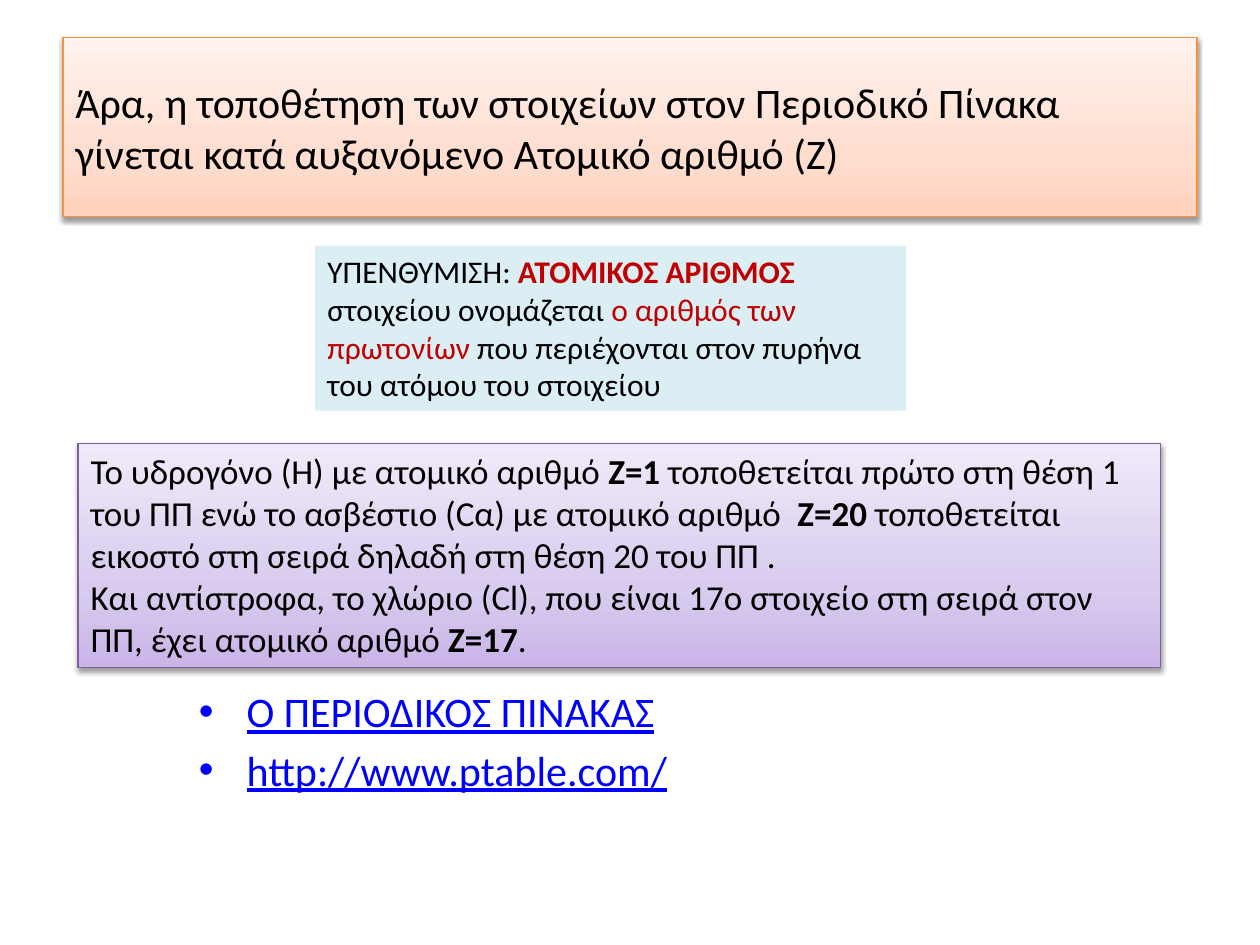
import copy
import pptx
import pptx.dml.color
import pptx.enum.shapes
import pptx.enum.text
import pptx.oxml
import pptx.util

Inches = pptx.util.Inches
Pt = pptx.util.Pt
NS = 'xmlns:a="http://schemas.openxmlformats.org/drawingml/2006/main"'
SHADE = (f'<a:outerShdw {NS} blurRad="39370" dist="20320" dir="5400000" rotWithShape="0">'
         '<a:srgbClr val="000000"><a:alpha val="38000"/></a:srgbClr></a:outerShdw>')
RED = "C00000"


def tint(color):
    return pptx.dml.color.RGBColor.from_string(color)


def write(frame, paras, size=24, color="000000", line=False, bullet=False, gap=0,
          anchor=pptx.enum.text.MSO_ANCHOR.TOP):
    frame.word_wrap = True
    frame.vertical_anchor = anchor
    for i, runs in enumerate(paras):
        para = frame.paragraphs[0] if i == 0 else frame.add_paragraph()
        para.alignment = pptx.enum.text.PP_ALIGN.LEFT
        if i:
            para.space_before = Pt(gap)
        if bullet:
            props = para._p.get_or_add_pPr()
            props.set("marL", str(Inches(0.38)))
            props.set("indent", str(-Inches(0.38)))
            for tag in (f'<a:buFont {NS} typeface="Arial"/>', f'<a:buChar {NS} char="•"/>'):
                props.append(pptx.oxml.parse_xml(tag))
        for text, bold, hue in runs:
            run = para.add_run()
            run.text = text
            font = run.font
            font.name = "Calibri"
            font.size = Pt(size)
            font.bold = bold
            font.underline = line
            font.color.rgb = tint(hue or color)


deck = pptx.Presentation()
deck.slide_width = Inches(10)
deck.slide_height = Inches(7.5)
slide = deck.slides.add_slide(deck.slide_layouts[6])

links = slide.shapes.add_textbox(Inches(1.48), Inches(5.39), Inches(7), Inches(1.21))
write(links.text_frame,
      [[("Ο ΠΕΡΙΟΔΙΚΟΣ ΠΙΝΑΚΑΣ", False, None)], [("http://www.ptable.com/", False, None)]],
      color="0000FF", line=True, bullet=True, gap=4.8)

title = [[("Άρα, η τοποθέτηση των στοιχείων στον Περιοδικό Πίνακα "
           "γίνεται κατά αυξανόμενο Ατομικό αριθμό (Ζ)", False, None)]]
recall = [[
    ("ΥΠΕΝΘΥΜΙΣΗ: ", False, None),
    ("ΑΤΟΜΙΚΟΣ ΑΡΙΘΜΟΣ ", True, RED),
    ("στοιχείου ονομάζεται ", False, None),
    ("ο αριθμός των πρωτονίων", False, RED),
    (" που περιέχονται στον πυρήνα του ατόμου του στοιχείου", False, None),
]]
cases = [[
    ("Το υδρογόνο (Η) με ατομικό αριθμό ", False, None),
    ("Ζ=1", True, None),
    (" τοποθετείται πρώτο στη θέση 1 του ΠΠ ενώ το ασβέστιο (Cα) με ατομικό αριθμό  ", False, None),
    ("Ζ=20", True, None),
    (" τοποθετείται εικοστό στη σειρά δηλαδή στη θέση 20 του ΠΠ .", False, None),
], [
    ("Και αντίστροφα, το χλώριο (Cl), που είναι 17ο στοιχείο στη σειρά στον ΠΠ, "
     "έχει ατομικό αριθμό ", False, None),
    ("Ζ=17", True, None),
    (".", False, None),
]]

top, middle = pptx.enum.text.MSO_ANCHOR.TOP, pptx.enum.text.MSO_ANCHOR.MIDDLE
panels = [
    ((0.5, 0.3, 9, 1.42), ("FFD2BD", "FFDED0", "FFF2ED"), "F69240", title, 24, middle),
    ((2.5, 1.95, 4.69, 1.31), ("DBEEF4",), None, recall, 18, top),
    ((0.62, 3.52, 8.59, 1.78), ("C9B5E8", "D8CBEE", "F0EAF9"), "7D60A0", cases, 20, top),
]
for place, hues, edge, paras, size, anchor in panels:
    box = slide.shapes.add_shape(pptx.enum.shapes.MSO_SHAPE.RECTANGLE, *map(Inches, place))
    box.shadow.inherit = False
    if edge:
        box.fill.gradient()
        box.fill.gradient_angle = 90
        stops = box.fill._fill._gradFill.gsLst
        stops.append(copy.deepcopy(stops[-1]))
        for stop, hue, spot in zip(box.fill.gradient_stops, hues, (0, 0.35, 1)):
            stop.color.rgb = tint(hue)
            stop.position = spot
        box.line.color.rgb = tint(edge)
        box.line.width = Pt(0.75)
        effects = box._element.spPr.find(pptx.oxml.ns.qn("a:effectLst"))
        effects.append(pptx.oxml.parse_xml(SHADE))
    else:
        box.fill.solid()
        box.fill.fore_color.rgb = tint(hues[0])
        box.line.fill.background()
    write(box.text_frame, paras, size=size, anchor=anchor)

deck.save("out.pptx")
